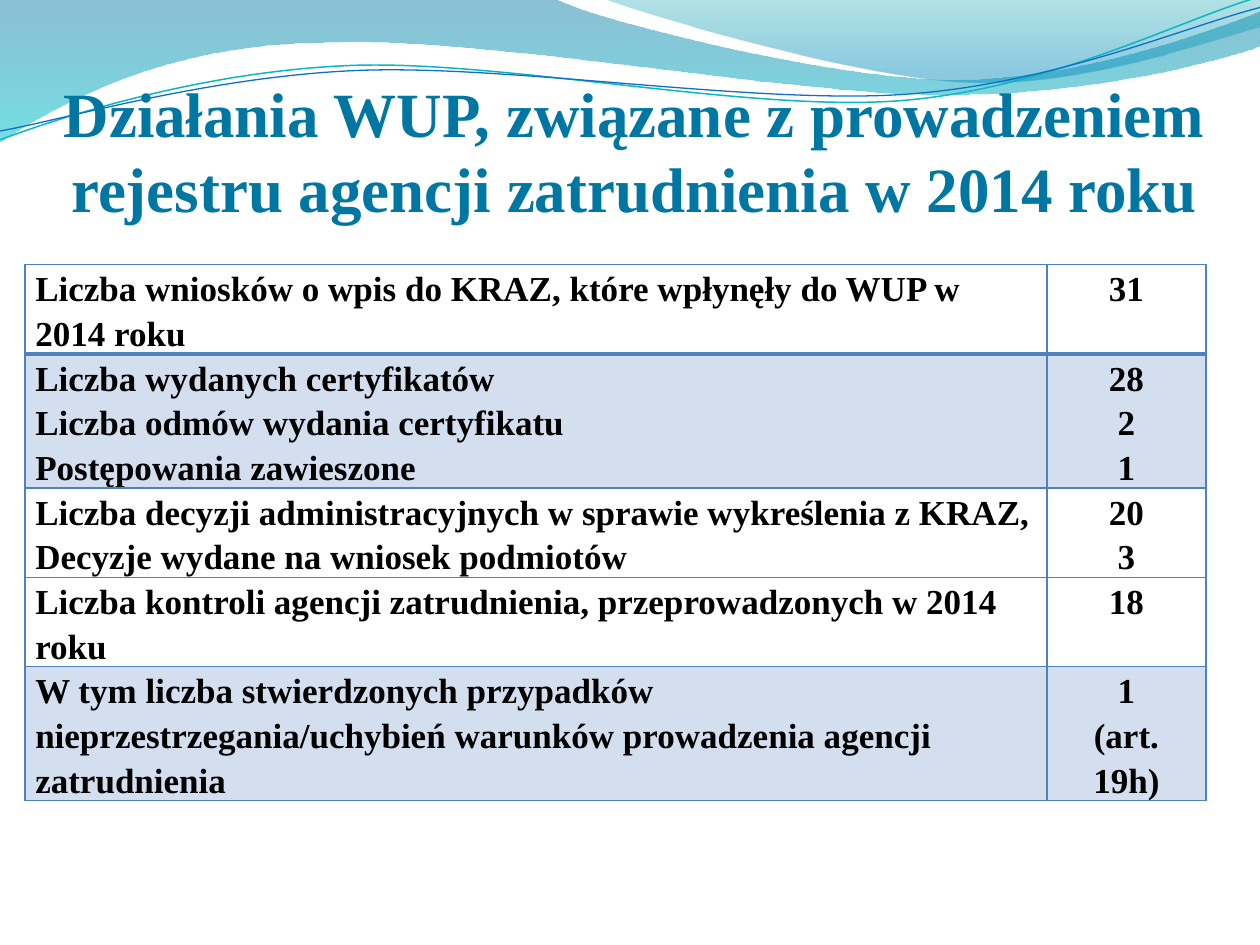
import math
import pptx
import pptx.util
import pptx.dml.color
import pptx.enum.text
import pptx.oxml
import pptx.oxml.ns
from dataclasses import dataclass

Inches = pptx.util.Inches
Pt = pptx.util.Pt
Align = pptx.enum.text.PP_ALIGN
qn = pptx.oxml.ns.qn
NS = pptx.oxml.ns.nsdecls("a")


@dataclass(frozen=True)
class Theme:
    font: str = "Times New Roman"
    head: int = 36
    body: int = 20
    title: str = "0076A3"
    ink: str = "000000"
    edge: str = "4F81BD"
    band: str = "D3DFEE"
    wide: tuple = ((0, "0074A1", 45), (100, "00C6CF", 55))
    crest: tuple = ((0, "00A1A9", 30), (80, "008BBF", 45))
    teal: str = "0AB8BF"
    blue: str = "0F6FC6"


THEME = Theme()
TILT = 357.3

WIDE = [(0, -0.01), (4.4, -0.01),
        (4.76, 0.17, 6.64, 0.63, 7.58, 0.63),
        (8.53, 0.63, 9.58, 0.26, 10, 0.09), (10.01, 0.36),
        (9.83, 0.44, 8.7, 0.76, 7.46, 0.75),
        (6.22, 0.75, 3.82, 0.28, 2.57, 0.34),
        (1.29, 0.35, 0.46, 0.83, -0.01, 1.13)]
CREST = [(4.79, -0.01), (5.09, 0.11, 6.82, 0.62, 7.69, 0.65),
         (8.56, 0.69, 9.61, 0.32, 10, 0.21), (10, 0)]
UPPER = [(0, 1.11), (0.48, 0.93, 1.58, 0.57, 2.77, 0.52),
         (3.95, 0.47, 5.93, 0.89, 7.13, 0.8),
         (8.33, 0.71, 9.38, 0.15, 9.98, -0.02)]
LOWER = [(0, 1.04), (0.47, 0.96, 1.64, 0.61, 2.83, 0.56),
         (4.03, 0.51, 5.97, 0.83, 7.17, 0.75),
         (8.36, 0.67, 9.41, 0.21, 10, 0.06)]

HEAD = "Działania WUP, związane z prowadzeniem rejestru agencji zatrudnienia w 2014 roku"
ROWS = [
    (0.69, False, ["Liczba wniosków o wpis do KRAZ, które wpłynęły do WUP w 2014 roku"], ["31"]),
    (0.69, True, ["Liczba wydanych certyfikatów", "Liczba odmów wydania certyfikatu",
                  "Postępowania zawieszone"], ["28", "2", "1"]),
    (0.66, False, ["Liczba decyzji administracyjnych w sprawie wykreślenia z KRAZ,",
                   "Decyzje wydane na wniosek podmiotów"], ["20", "3"]),
    (0.62, False, ["Liczba kontroli agencji zatrudnienia, przeprowadzonych w 2014 roku"], ["18"]),
    (0.83, True, ["W tym liczba stwierdzonych przypadków nieprzestrzegania/uchybień "
                  "warunków prowadzenia agencji zatrudnienia"], ["1", "(art. 19h)"]),
]


def color(code):
    return pptx.dml.color.RGBColor.from_string(code)


def write(para, text, size, ink, align):
    para.alignment = align
    run = para.add_run()
    run.text = text
    run.font.name = THEME.font
    run.font.size = Pt(size)
    run.font.bold = True
    run.font.color.rgb = color(ink)


def pairs(part):
    return list(zip(part[::2], part[1::2]))


def turn(parts, mid, angle):
    cos, sin = math.cos(math.radians(angle)), math.sin(math.radians(angle))
    out = []
    for part in parts:
        spun = []
        for x, y in pairs(part):
            dx, dy = x - mid[0], y - mid[1]
            spun += [mid[0] + dx * cos - dy * sin, mid[1] + dx * sin + dy * cos]
        out.append(tuple(spun))
    return out


def outline(shapes, box, parts, close):
    left, top = box
    pts = [(Inches(left + x), Inches(top + y)) for part in parts for x, y in pairs(part)]
    pen = shapes.build_freeform(*pts[0], scale=1.0)
    pen.add_line_segments(pts[1:], close=close)
    shape = pen.convert_to_shape()
    shape.shadow.inherit = False
    nodes = iter(list(shape._element.iter(qn("a:lnTo"))))
    for part in parts[1:]:
        node = next(nodes)
        if len(part) == 6:
            curve = pptx.oxml.parse_xml(f"<a:cubicBezTo {NS}/>")
            node.addprevious(curve)
            for step in (node, next(nodes), next(nodes)):
                curve.append(step[0])
                step.getparent().remove(step)
    return shape


def wave(slide, box, parts, stops):
    shape = outline(slide.shapes, box, parts, True)
    shape.line.fill.background()
    shape.fill.gradient()
    shape.fill.gradient_angle = 270
    for stop, (pos, code, _) in zip(shape.fill.gradient_stops, stops):
        stop.position = pos / 100
        stop.color.rgb = color(code)
    for node, (_, _, alpha) in zip(shape._element.spPr.iter(qn("a:srgbClr")), stops):
        node.append(pptx.oxml.parse_xml(f'<a:alpha {NS} val="{alpha * 1000}"/>'))


def strand(shapes, box, parts, mid, code, width):
    shape = outline(shapes, box, turn(parts, mid, 360 - TILT), False)
    shape.rotation = TILT
    shape.fill.background()
    shape.line.color.rgb = color(code)
    shape.line.width = Pt(width)


def banner(slide, box):
    wave(slide, box, WIDE, THEME.wide)
    wave(slide, box, CREST, THEME.crest)
    group = slide.shapes.add_group_shape()
    strand(group.shapes, box, UPPER, (4.99, 0.58), THEME.teal, 0.85)
    strand(group.shapes, box, LOWER, (5, 0.59), THEME.blue, 0.75)


def header(slide, box):
    title = slide.shapes.title
    title.left, title.top, title.width, title.height = map(Inches, box)
    slide.shapes._spTree.append(title._element)
    frame = title.text_frame
    frame.auto_size = pptx.enum.text.MSO_AUTO_SIZE.NONE
    frame.word_wrap = True
    frame.vertical_anchor = pptx.enum.text.MSO_ANCHOR.BOTTOM
    frame.margin_left = frame.margin_right = frame.margin_bottom = 0
    frame.margin_top = Inches(0.05)
    write(frame.paragraphs[0], HEAD, THEME.head, THEME.title, Align.CENTER)


def border(cell, sides):
    props = cell._tc.get_or_add_tcPr()
    for side, width in sides.items():
        props.append(pptx.oxml.parse_xml(
            f'<a:ln{side} {NS} w="{Pt(width)}">'
            f'<a:solidFill><a:srgbClr val="{THEME.edge}"/></a:solidFill></a:ln{side}>'))


def fill(cell, lines, align, shade, sides):
    cell.margin_left = cell.margin_right = Inches(0.08)
    cell.margin_top = cell.margin_bottom = 0
    border(cell, sides)
    if shade:
        cell.fill.solid()
        cell.fill.fore_color.rgb = color(THEME.band)
    else:
        cell.fill.background()
    frame = cell.text_frame
    for i, line in enumerate(lines):
        para = frame.add_paragraph() if i else frame.paragraphs[0]
        para.line_spacing = 1.15
        write(para, line, THEME.body, THEME.ink, align)


def grid(slide, box):
    table = slide.shapes.add_table(len(ROWS), 2, *map(Inches, box)).table
    table.first_row = table.horz_banding = False
    last = 1.26
    for col, width in zip(table.columns, (box[2] - last, last)):
        col.width = Inches(width)
    for i, (height, shade, *cells) in enumerate(ROWS):
        table.rows[i].height = Inches(height)
        sides = {"L": 1, "R": 1, "T": 2.25 if i == 1 else 1, "B": 2.25 if i == 0 else 1}
        for j, align in enumerate((Align.LEFT, Align.CENTER)):
            fill(table.cell(i, j), cells[j], align, shade, sides)


def main():
    deck = pptx.Presentation()
    deck.slide_width, deck.slide_height = Inches(10), Inches(7.5)
    slide = deck.slides.add_slide(deck.slide_layouts[5])
    banner(slide, (0, 0))
    header(slide, (0.35, 0.29, 9.37, 1.5))
    grid(slide, (0.2, 2.1, 9.37, 4.56))
    deck.save("out.pptx")


if __name__ == "__main__":
    main()
